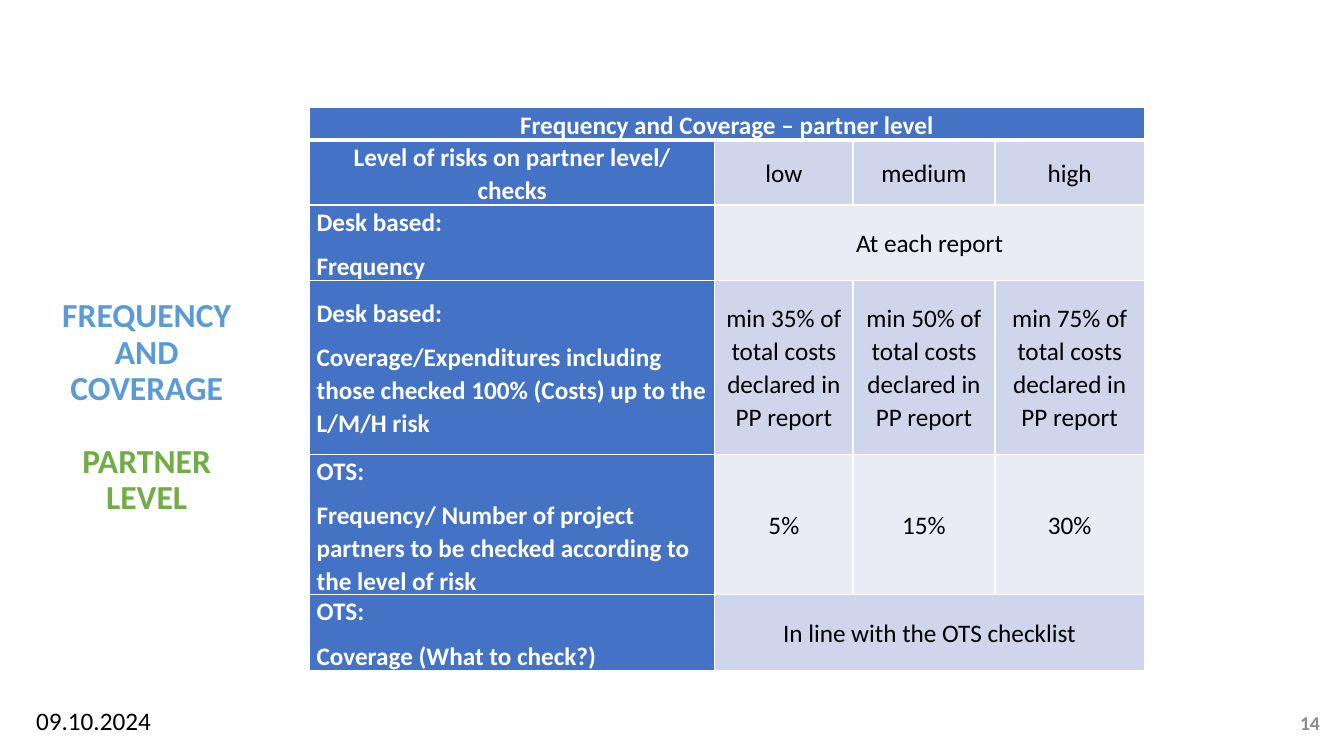
from pptx import Presentation
from pptx.dml.color import RGBColor as RGB
from pptx.enum.text import MSO_ANCHOR as Anchor, PP_ALIGN as Align
from pptx.oxml import parse_xml
from pptx.oxml.ns import nsdecls
from pptx.util import Inches, Pt

HUES = {"white": "FFFFFF", "black": "000000", "gray": "8C8C8C", "head": "4472C4",
        "dark": "CFD5EA", "light": "E9EBF5", "blue": "5B9BD5", "green": "70AD47"}


def write(frame, lines, hue, size, bold=False, align=Align.LEFT, **form):
    """Fill a text frame with one paragraph per line."""
    frame.word_wrap = True
    for i, line in enumerate(lines):
        para = frame.paragraphs[0] if i == 0 else frame.add_paragraph()
        para.text = line
        para.alignment = align
        for key, val in form.items():
            setattr(para, key, val)
        para.font.color.rgb = RGB.from_string(HUES[hue])
        for key, val in {"name": "Calibri", "size": Pt(size), "bold": bold}.items():
            setattr(para.font, key, val)


def add_box(left, top, width, height, anchor):
    """Add an empty text box and return its frame."""
    box = slide.shapes.add_textbox(*map(Inches, (left, top, width, height)))
    box.text_frame.vertical_anchor = anchor
    return box.text_frame


deck = Presentation()
deck.slide_width, deck.slide_height = Inches(13.33), Inches(7.5)
slide = deck.slides.add_slide(deck.slide_layouts[6])

# Footer
write(add_box(12.66, 6.98, 0.53, 0.38, Anchor.MIDDLE), ["14"], "gray", 14, True, Align.RIGHT)
write(add_box(0.26, 6.95, 1.84, 0.4, Anchor.TOP), ["09.10.2024"], "black", 18)

# Side title, with a gap of one line before its second part
title = add_box(0.43, 3.37, 2.05, 1.35, Anchor.MIDDLE)
write(title, ["FREQUENCY AND COVERAGE", "PARTNER", "LEVEL"], "green", 24, True,
      Align.CENTER, line_spacing=0.9)
title.paragraphs[0].font.color.rgb = RGB.from_string(HUES["blue"])
title.paragraphs[1].space_before = Pt(26)

# Table content: row label, then its values; a single value spans all levels
ROWS = [
    (["Frequency and Coverage – partner level"], []),
    (["Level of risks on partner level/ checks"], ["low", "medium", "high"]),
    (["Desk based:", "Frequency"], ["At each report"]),
    (["Desk based:", "Coverage/Expenditures including those checked 100% (Costs) "
      "up to the L/M/H risk"],
     [f"min {share}% of total costs declared in PP report" for share in (35, 50, 75)]),
    (["OTS:", "Frequency/ Number of project partners to be checked according to "
      "the level of risk"], ["5%", "15%", "30%"]),
    (["OTS:", "Coverage (What to check?)"], ["In line with the OTS checklist"]),
]
WIDTHS = [4.02, 1.37, 1.41, 1.48]
HEIGHTS = [0.29, 0.57, 0.75, 1.72, 1.3, 0.75]
table = slide.shapes.add_table(len(ROWS), len(WIDTHS), Inches(3.07), Inches(1.07),
                               Inches(sum(WIDTHS)), Inches(sum(HEIGHTS))).table
table.first_row = table.horz_banding = False
for col, width in zip(table.columns, WIDTHS):
    col.width = Inches(width)
for row, height in zip(table.rows, HEIGHTS):
    row.height = Inches(height)

# Cell format: white borders, thick below the heading row
CELL = {"margin_left": Inches(0.07), "margin_right": Inches(0.07),
        "margin_top": 0, "margin_bottom": 0, "vertical_anchor": Anchor.MIDDLE}
for r in range(len(ROWS)):
    for c in range(len(WIDTHS)):
        cell = table.cell(r, c)
        for key, val in CELL.items():
            setattr(cell, key, val)
        props = cell._tc.get_or_add_tcPr()
        for side in "LRTB":
            thick = (r, side) in ((0, "B"), (1, "T"))
            props.append(parse_xml(
                f'<a:ln{side} {nsdecls("a")} w="{Pt(3 if thick else 1)}"><a:solidFill>'
                f'<a:srgbClr val="{HUES["white"]}"/></a:solidFill></a:ln{side}>'))
        hue = "head" if r == 0 or c == 0 else "dark" if r % 2 else "light"
        cell.fill.solid()
        cell.fill.fore_color.rgb = RGB.from_string(HUES[hue])

# Merged cells and text
for r, (label, vals) in enumerate(ROWS):
    if len(vals) < 3:
        table.cell(r, len(vals)).merge(table.cell(r, 3))
    gap = {"line_spacing": 1.07, "space_after": Pt(6 if r < 2 else 8)}
    write(table.cell(r, 0).text_frame, label, "white", 18, True,
          Align.CENTER if r < 2 else Align.LEFT, **gap)
    for c, val in enumerate(vals, 1):
        write(table.cell(r, c).text_frame, [val], "black", 18, align=Align.CENTER, **gap)

deck.save("out.pptx")
